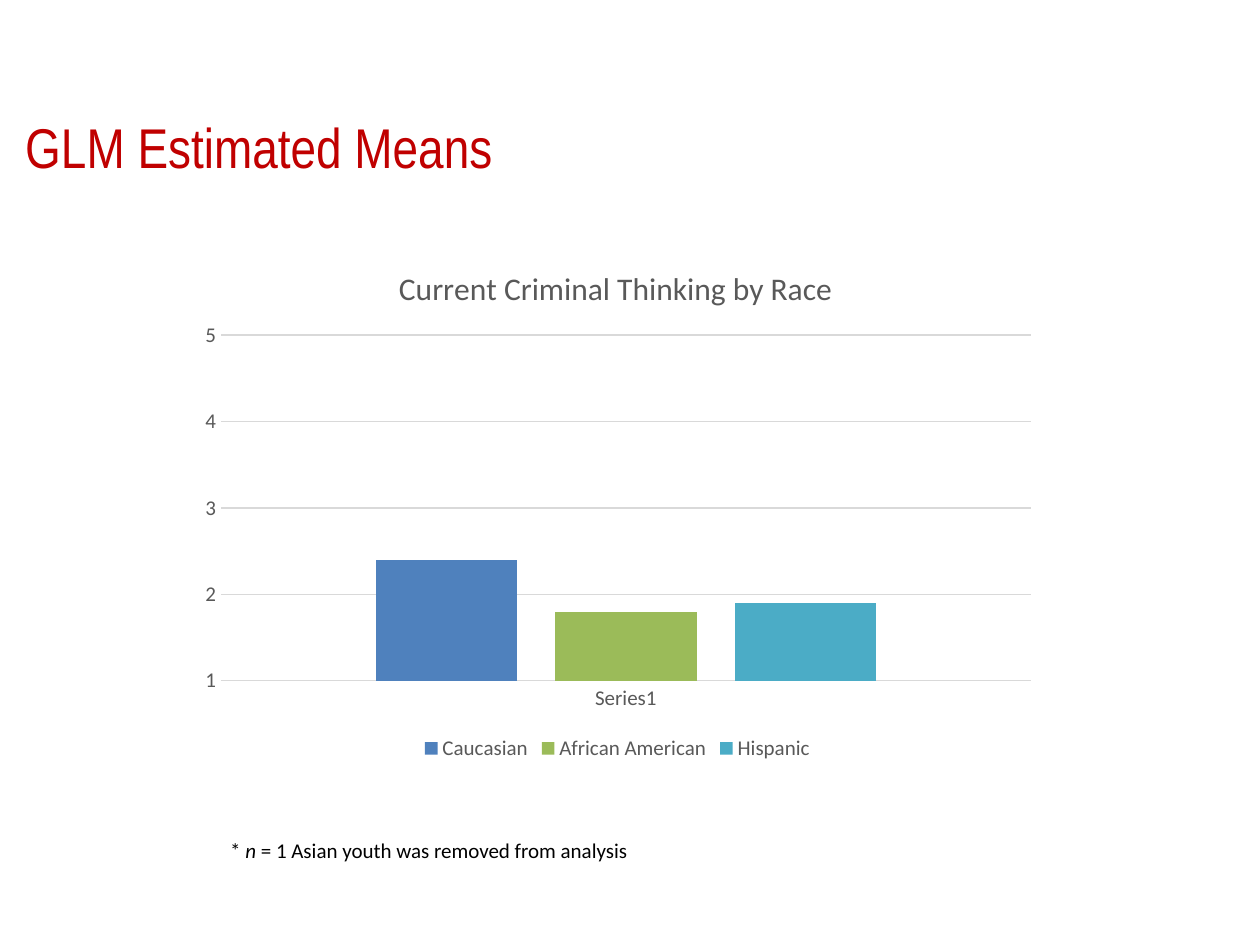
from dataclasses import dataclass

from lxml import etree
from pptx import Presentation
from pptx import util as u
from pptx.chart import data as chart_data
from pptx.dml.color import RGBColor
from pptx.enum import chart as charts, text
from pptx.oxml import ns


@dataclass(frozen=True)
class Theme:
    heading_font: str = "Arial Narrow"
    body_font: str = "Calibri"
    heading: str = "C00000"
    body: str = "000000"
    muted: str = "595959"
    grid: str = "D9D9D9"
    bars: tuple = ("4F81BD", "9BBB59", "4BACC6")
    heading_size: int = 32
    chart_title_size: int = 18
    body_size: int = 12


THEME = Theme()


def style_font(font, size, color, name=THEME.body_font, italic=False):
    font.name = name
    font.size = u.Pt(size)
    font.color.rgb = RGBColor.from_string(color)
    font.bold = False
    font.italic = italic


def add_span(para, words, **style):
    span = para.add_run()
    span.text = words
    style_font(span.font, **style)


def add_box(page, left, top, width, height, anchor, indent=0.25):
    box = page.shapes.add_textbox(u.Cm(left), u.Cm(top), u.Cm(width), u.Cm(height))
    frame = box.text_frame
    frame.word_wrap = True
    frame.vertical_anchor = anchor
    frame.margin_left = u.Cm(indent)
    return frame.paragraphs[0]


def set_layout(element, **fractions):
    """Place a chart part by fractions of the chart's size."""
    for old in element.findall(ns.qn("c:layout")):
        element.remove(old)
    layout = etree.Element(ns.qn("c:layout"))
    manual = etree.SubElement(layout, ns.qn("c:manualLayout"))
    if "w" in fractions:
        etree.SubElement(manual, ns.qn("c:layoutTarget"), val="inner")
    for axis in "xy":
        etree.SubElement(manual, ns.qn(f"c:{axis}Mode"), val="edge")
    for key, value in fractions.items():
        etree.SubElement(manual, ns.qn(f"c:{key}"), val=str(value))
    # The layout follows the text of a title and leads a plot area
    rich = element.find(ns.qn("c:tx"))
    if rich is None:
        element.insert(0, layout)
    else:
        rich.addnext(layout)


def add_heading(page, left, top, width, height):
    para = add_box(page, left, top, width, height, text.MSO_ANCHOR.MIDDLE, indent=0.51)
    add_span(para, "GLM Estimated Means", size=THEME.heading_size,
             color=THEME.heading, name=THEME.heading_font)


def style_axes(chart):
    for axis in (chart.category_axis, chart.value_axis):
        axis.major_tick_mark = axis.minor_tick_mark = charts.XL_TICK_MARK.NONE
        style_font(axis.tick_labels.font, THEME.body_size, THEME.muted)
    values = chart.value_axis
    values.minimum_scale, values.maximum_scale, values.major_unit = 1, 5, 1
    values.has_major_gridlines = True
    values.format.line.fill.background()
    for line in (chart.category_axis.format.line, values.major_gridlines.format.line):
        line.color.rgb = RGBColor.from_string(THEME.grid)
        line.width = u.Pt(0.75)


def add_means_chart(page, left, top, width, height):
    means = chart_data.CategoryChartData(number_format="General")
    means.categories = ["Series1"]
    for group, mean in (("Caucasian", 2.4), ("African American", 1.8), ("Hispanic", 1.9)):
        means.add_series(group, [mean])
    chart = page.shapes.add_chart(
        charts.XL_CHART_TYPE.COLUMN_CLUSTERED,
        u.Cm(left), u.Cm(top), u.Cm(width), u.Cm(height), means).chart
    style_font(chart.font, 10, THEME.body)

    # Title
    chart.has_title = True
    title = chart.chart_title
    add_span(title.text_frame.paragraphs[0], "Current Criminal Thinking by Race",
             size=THEME.chart_title_size, color=THEME.muted)
    title.include_in_layout = False
    set_layout(title._element, x=0.24, y=0.05)

    # Bars
    plot = chart.plots[0]
    plot.gap_width, plot.overlap = 219, -27
    plot.vary_by_categories = False
    for series, color in zip(plot.series, THEME.bars):
        series.format.fill.solid()
        series.format.fill.fore_color.rgb = RGBColor.from_string(color)
        series.invert_if_negative = False
    plot_area = chart._chartSpace.find(".//" + ns.qn("c:plotArea"))
    set_layout(plot_area, x=0.04, y=0.19, w=0.94, h=0.65)

    style_axes(chart)

    # Legend
    chart.has_legend = True
    chart.legend.position = charts.XL_LEGEND_POSITION.BOTTOM
    chart.legend.include_in_layout = False
    style_font(chart.legend.font, THEME.body_size, THEME.muted)


def add_footnote(page, left, top, width, height):
    para = add_box(page, left, top, width, height, text.MSO_ANCHOR.TOP)
    for words, italic in (("* ", False), ("n ", True),
                          ("= 1 Asian youth was removed from analysis", False)):
        add_span(para, words, size=THEME.body_size, color=THEME.body, italic=italic)


def main():
    deck = Presentation()
    deck.slide_width, deck.slide_height = u.Cm(25.4), u.Cm(19.05)
    page = deck.slides.add_slide(deck.slide_layouts[6])
    add_heading(page, 0, 1.75, 19.74, 2.39)
    add_means_chart(page, 3.76, 4.72, 17.37, 10.72)
    add_footnote(page, 4.39, 16.76, 14.83, 0.76)
    deck.save("out.pptx")


if __name__ == "__main__":
    main()
